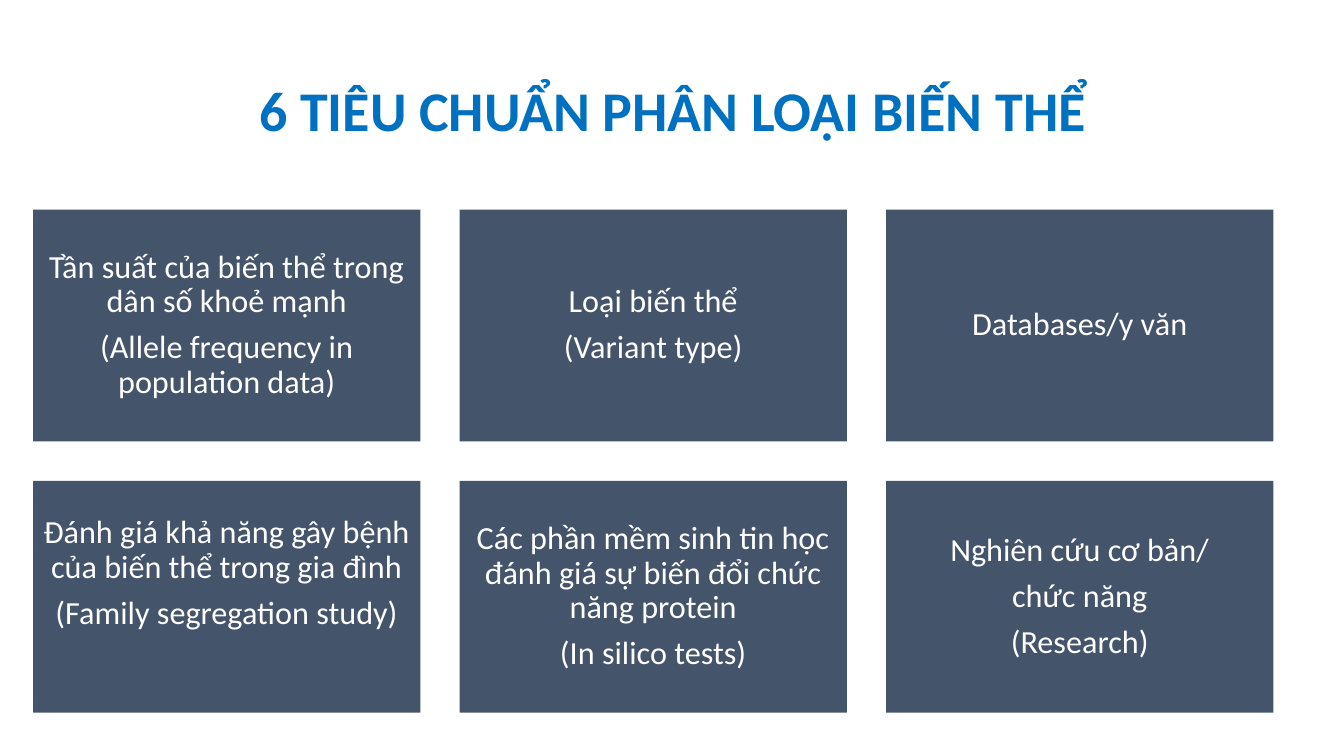
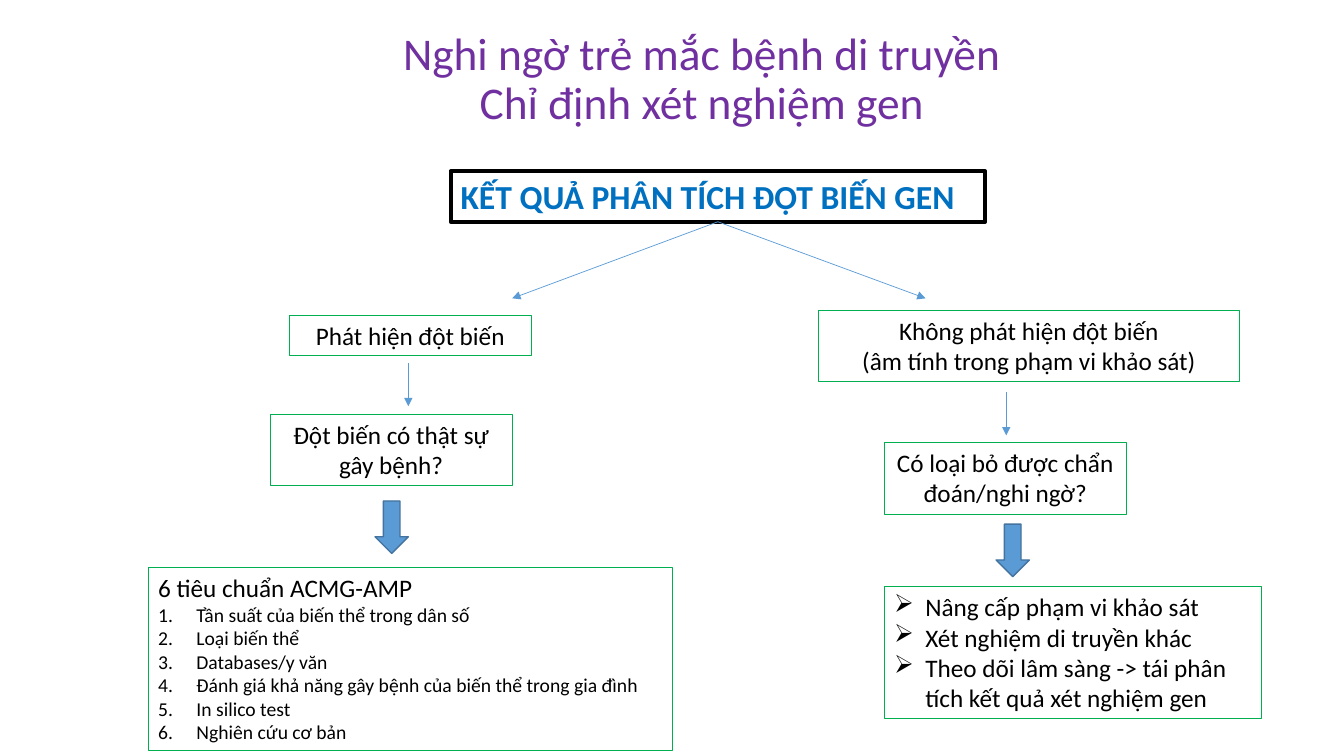
import lxml.etree
import pptx
import pptx.dml.color
import pptx.enum.shapes
import pptx.enum.text
import pptx.oxml.ns
import pptx.util

Inches = pptx.util.Inches
Pt = pptx.util.Pt
RGB = pptx.dml.color.RGBColor.from_string
SHAPE = pptx.enum.shapes.MSO_SHAPE
ALIGN = pptx.enum.text.PP_ALIGN
ANCHOR = pptx.enum.text.MSO_ANCHOR
AUTO_SIZE = pptx.enum.text.MSO_AUTO_SIZE
qn = pptx.oxml.ns.qn


class Theme:
    font = "Calibri"
    blue = RGB("0070C0")
    purple = RGB("7030A0")
    slate = RGB("44546A")
    green = RGB("00B050")
    arrow = RGB("5B9BD5")
    arrow_edge = RGB("43739E")
    black = RGB("000000")
    white = RGB("FFFFFF")
    criteria_title = Pt(40)
    flow_title = Pt(32.4)
    result = Pt(24)
    card = Pt(23)
    body = Pt(18)
    numbered = Pt(14)
    tight = 0.9


def write(paragraph, text, size, color, align=ALIGN.LEFT, bold=False):
    """Fill a paragraph with one run per line of text."""
    paragraph.alignment = align
    for number, line in enumerate(text.split("\n")):
        if number:
            paragraph.add_line_break()
        run = paragraph.add_run()
        run.text = line
        run.font.name = Theme.font
        run.font.size = size
        run.font.bold = bold
        run.font.color.rgb = color


def add_titled_slide(text, box, size, color, bold):
    """Add a title-only slide with its title placed and formatted."""
    slide = deck.slides.add_slide(deck.slide_layouts[5])
    title = slide.shapes.title
    title.left, title.top, title.width, title.height = map(Inches, box)
    frame = title.text_frame
    frame.word_wrap = True
    frame.auto_size = AUTO_SIZE.NONE
    frame.vertical_anchor = ANCHOR.MIDDLE
    write(frame.paragraphs[0], text, size, color, ALIGN.CENTER, bold)
    frame.paragraphs[0].line_spacing = Theme.tight
    return slide


deck = pptx.Presentation()
deck.slide_width, deck.slide_height = Inches(13.33), Inches(7.5)

# Slide 1: six criteria in a grid of cards
criteria_slide = add_titled_slide(
    "6 TIÊU CHUẨN PHÂN LOẠI BIẾN THỂ", (0.92, 0.4, 11.5, 1.45),
    Theme.criteria_title, Theme.blue, True)

# Each criterion: its paragraphs and the bottom inset of its card
criteria = [
    (["Tần suất của biến thể trong dân số khoẻ mạnh",
      "(Allele frequency in population data)"], 0.1),
    (["Loại biến thể", "(Variant type)"], 0.1),
    (["Databases/y văn"], 0.1),
    (["Đánh giá khả năng gây bệnh của biến thể trong gia đình",
      "(Family segregation study)"], 0.56),
    (["Các phần mềm sinh tin học đánh giá sự biến đổi chức năng protein",
      "(In silico tests)"], 0.1),
    (["Nghiên cứu cơ bản/", "chức năng", "(Research)"], 0.1),
]
card_width, card_height, gap = 3.84, 2.3, 0.39
for index, (lines, bottom_inset) in enumerate(criteria):
    row, column = divmod(index, 3)
    card = criteria_slide.shapes.add_shape(
        SHAPE.RECTANGLE,
        Inches(0.33 + column * (card_width + gap)),
        Inches(2.08 + row * (card_height + gap)),
        Inches(card_width), Inches(card_height))
    card.shadow.inherit = False
    card.fill.solid()
    card.fill.fore_color.rgb = Theme.slate
    card.line.fill.background()
    frame = card.text_frame
    frame.word_wrap = True
    frame.vertical_anchor = ANCHOR.MIDDLE
    frame.margin_left = frame.margin_right = frame.margin_top = Inches(0.1)
    frame.margin_bottom = Inches(bottom_inset)
    for number, line in enumerate(lines):
        paragraph = frame.add_paragraph() if number else frame.paragraphs[0]
        write(paragraph, line, Theme.card, Theme.white, ALIGN.CENTER)
        paragraph.line_spacing = Theme.tight
        paragraph.space_after = Pt(8)

# Slide 2: decision flow after a gene test
flow_slide = add_titled_slide(
    "Nghi ngờ trẻ mắc bệnh di truyền\nChỉ định xét nghiệm gen",
    (1.21, 0.25, 11.5, 1.1), Theme.flow_title, Theme.purple, False)

# Result box at the head of the flow
result = flow_slide.shapes.add_textbox(
    Inches(4.47), Inches(1.7), Inches(5.3), Inches(0.5))
result.line.color.rgb = Theme.black
result.line.width = Pt(3)
result.text_frame.word_wrap = True
result.text_frame.auto_size = AUTO_SIZE.SHAPE_TO_FIT_TEXT
write(result.text_frame.paragraphs[0], "KẾT QUẢ PHÂN TÍCH ĐỘT BIẾN GEN",
      Theme.result, Theme.blue, bold=True)

# Steps: box, alignment, and paragraphs as (text, size, bullet tag)
NUMBER, POINTER = "a:buAutoNum", "a:buChar"
steps = [
    ((2.87, 3.13, 2.4, 0.4), ALIGN.CENTER,
     [("Phát hiện đột biến", Theme.body, None)]),
    ((2.68, 4.11, 2.4, 0.71), ALIGN.CENTER,
     [("Đột biến có thật sự gây bệnh?", Theme.body, None)]),
    ((1.47, 5.63, 5.2, 1.82), ALIGN.LEFT,
     [("6 tiêu chuẩn ACMG-AMP", Theme.body, None)]
     + [(item, Theme.numbered, NUMBER) for item in (
         "Tần suất của biến thể trong dân số",
         "Loại biến thể",
         "Databases/y văn",
         "Đánh giá khả năng gây bệnh của biến thể trong gia đình",
         "In silico test",
         "Nghiên cứu cơ bản")]),
    ((8.12, 3.08, 4.17, 0.71), ALIGN.CENTER,
     [("Không phát hiện đột biến", Theme.body, None),
      ("(âm tính trong phạm vi khảo sát)", Theme.body, None)]),
    ((8.77, 4.39, 2.4, 0.71), ALIGN.CENTER,
     [("Có loại bỏ được chẩn đoán/nghi ngờ?", Theme.body, None)]),
    ((8.77, 5.82, 3.74, 1.31), ALIGN.LEFT,
     [(item, Theme.body, POINTER) for item in (
         "Nâng cấp phạm vi khảo sát",
         "Xét nghiệm di truyền khác",
         "Theo dõi lâm sàng -> tái phân tích kết quả xét nghiệm gen")]),
]
bullets = {
    NUMBER: (0.38, {"type": "arabicPeriod"}),
    POINTER: (0.31, {"char": "➢"}),
}
for box, align, items in steps:
    step = flow_slide.shapes.add_textbox(*map(Inches, box))
    step.line.color.rgb = Theme.green
    step.line.width = Pt(0.75)
    frame = step.text_frame
    frame.word_wrap = True
    frame.auto_size = AUTO_SIZE.SHAPE_TO_FIT_TEXT
    for number, (text, size, bullet) in enumerate(items):
        paragraph = frame.add_paragraph() if number else frame.paragraphs[0]
        write(paragraph, text, size, Theme.black, align)
        if bullet:
            indent, attributes = bullets[bullet]
            properties = paragraph._p.get_or_add_pPr()
            properties.set("marL", str(Inches(indent)))
            properties.set("indent", str(-Inches(indent)))
            lxml.etree.SubElement(properties, qn(bullet), attributes)

# Thin arrows: two branches from the result box, then one down each branch
thin_arrows = [
    (7.12, 2.2, 5.08, 2.96, result),
    (7.12, 2.2, 9.18, 2.96, result),
    (4.05, 3.6, 4.05, 4.03, None),
    (9.98, 3.89, 9.98, 4.32, None),
]
for *ends, source in thin_arrows:
    link = flow_slide.shapes.add_connector(
        pptx.enum.shapes.MSO_CONNECTOR.STRAIGHT, *map(Inches, ends))
    if source is not None:
        link.begin_connect(source, 2)
    link.line.color.rgb = Theme.arrow
    link.line.width = Pt(0.5)
    lxml.etree.SubElement(link.line._get_or_add_ln(), qn("a:tailEnd"),
                          {"type": "triangle"})
    lxml.etree.SubElement(link._element.spPr, qn("a:effectLst"))

# Block arrows leading to the last step of each branch
for left, top in ((3.72, 4.97), (9.88, 5.2)):
    block_arrow = flow_slide.shapes.add_shape(
        SHAPE.DOWN_ARROW, Inches(left), Inches(top), Inches(0.33), Inches(0.52))
    block_arrow.shadow.inherit = False
    block_arrow.fill.solid()
    block_arrow.fill.fore_color.rgb = Theme.arrow
    block_arrow.line.color.rgb = Theme.arrow_edge
    block_arrow.line.width = Pt(1)

deck.save("out.pptx")
